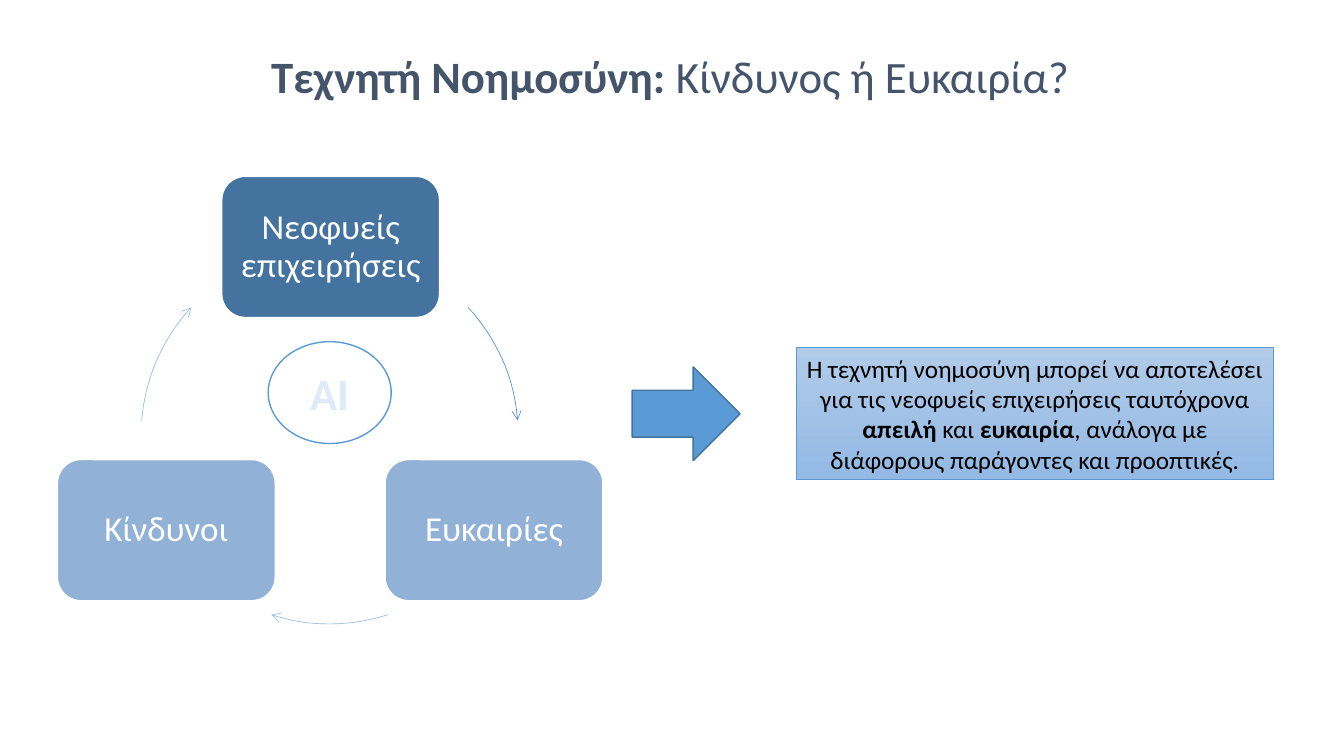
import dataclasses
import typing

import pptx
import pptx.dml.color
import pptx.enum.shapes
import pptx.enum.text
import pptx.oxml.ns
import pptx.util
from lxml import etree

Inches = pptx.util.Inches
ShapeKind = pptx.enum.shapes.MSO_SHAPE
Anchor = pptx.enum.text.MSO_ANCHOR


@dataclasses.dataclass(frozen=True)
class Theme:
    font: str = "Calibri"
    title_size: int = 32
    step_size: int = 25
    body_size: int = 18
    white: str = "FFFFFF"
    black: str = "000000"
    title: str = "44546A"
    accent: str = "5B9BD5"
    dark_blue: str = "43739E"
    soft_blue: str = "91B1D6"
    pale_blue: str = "DEEBF7"
    first_arc: str = "5794CB"
    soft_arc: str = "A0BEE0"
    gradient: tuple[str, str] = ("B1CBE9", "93B9E4")


class Area(typing.NamedTuple):
    left: float
    top: float
    width: float
    height: float


class Run(typing.NamedTuple):
    text: str
    bold: bool = False


class Step(typing.NamedTuple):
    text: str
    left: float
    top: float
    fill: str


class Arc(typing.NamedTuple):
    start: float
    end: float
    color: str


THEME = Theme()
STEP_WIDTH, STEP_HEIGHT = 2.16, 1.4
CYCLE = Area(1.4, 2.45, 3.74, 3.74)
STEPS = [
    Step("Νεοφυείς επιχειρήσεις", 2.2, 1.75, THEME.dark_blue),
    Step("Ευκαιρίες", 3.82, 4.56, THEME.soft_blue),
    Step("Κίνδυνοι", 0.57, 4.56, THEME.soft_blue),
]
ARCS = [
    Arc(317.2, 355.4, THEME.first_arc),
    Arc(72, 108, THEME.soft_arc),
    Arc(184.6, 222.8, THEME.soft_arc),
]
TITLE = [Run("Τεχνητή Νοημοσύνη: ", True), Run("Κίνδυνος ή Ευκαιρία? ")]
CONCLUSION = [
    Run("Η τεχνητή νοημοσύνη μπορεί να αποτελέσει για τις νεοφυείς επιχειρήσεις ταυτόχρονα "),
    Run("απειλή", True),
    Run(" και "),
    Run("ευκαιρία", True),
    Run(", ανάλογα με διάφορους παράγοντες και προοπτικές."),
]


def rgb(color: str) -> pptx.dml.color.RGBColor:
    return pptx.dml.color.RGBColor.from_string(color)


def add_shape(slide, kind, area: Area, fill: str | None, line: str, weight: float = 1):
    shape = slide.shapes.add_shape(kind, *map(Inches, area))
    shape.shadow.inherit = False
    if fill:
        shape.fill.solid()
        shape.fill.fore_color.rgb = rgb(fill)
    else:
        shape.fill.background()
    shape.line.color.rgb = rgb(line)
    shape.line.width = pptx.util.Pt(weight)
    return shape


def write(shape, runs: list[Run], size: int, color: str, spacing: float = 1.0,
          anchor=Anchor.MIDDLE) -> None:
    frame = shape.text_frame
    frame.word_wrap = True
    frame.vertical_anchor = anchor
    para = frame.paragraphs[0]
    para.alignment = pptx.enum.text.PP_ALIGN.CENTER
    para.line_spacing = spacing
    para.font.name = THEME.font
    para.font.size = pptx.util.Pt(size)
    para.font.color.rgb = rgb(color)
    for run in runs:
        span = para.add_run()
        span.text = run.text
        span.font.bold = run.bold


def add_step(slide, step: Step) -> None:
    area = Area(step.left, step.top, STEP_WIDTH, STEP_HEIGHT)
    box = add_shape(slide, ShapeKind.ROUNDED_RECTANGLE, area, step.fill, THEME.white)
    frame = box.text_frame
    frame.margin_left = frame.margin_right = Inches(0.1)
    write(box, [Run(step.text)], THEME.step_size, THEME.white, 0.9)


def add_arc(slide, arc: Arc) -> None:
    """Draw a clockwise arrow on the cycle; angles are degrees from three o'clock."""
    shape = add_shape(slide, ShapeKind.ARC, CYCLE, None, arc.color, 0.5)
    for index, angle in enumerate((arc.start, arc.end)):
        shape.adjustments[index] = angle * 60000 / 100000
    line = shape.line._get_or_add_ln()
    etree.SubElement(line, pptx.oxml.ns.qn("a:tailEnd"), type="arrow")


def add_conclusion(slide) -> None:
    box = add_shape(slide, ShapeKind.RECTANGLE, Area(7.9, 3.45, 4.73, 1.31),
                    None, THEME.accent, 0.5)
    box.fill.gradient()
    box.fill.gradient_angle = 270
    for stop, color in zip(box.fill.gradient_stops, THEME.gradient):
        stop.color.rgb = rgb(color)
    write(box, CONCLUSION, THEME.body_size, THEME.black)


def main() -> None:
    deck = pptx.Presentation()
    deck.slide_width, deck.slide_height = Inches(13.33), Inches(7.5)
    slide = deck.slides.add_slide(deck.slide_layouts[6])

    for step, arc in zip(STEPS, ARCS):
        add_step(slide, step)
        add_arc(slide, arc)

    title = slide.shapes.add_textbox(*map(Inches, Area(2.53, 0.49, 8.34, 0.73)))
    write(title, TITLE, THEME.title_size, THEME.title, 0.9, Anchor.TOP)

    hub = add_shape(slide, ShapeKind.OVAL, Area(2.66, 3.39, 1.22, 1.01),
                    THEME.white, THEME.accent)
    write(hub, [Run("AI", True)], THEME.title_size, THEME.pale_blue)

    add_conclusion(slide)
    add_shape(slide, ShapeKind.RIGHT_ARROW, Area(6.27, 3.64, 1.07, 0.93),
              THEME.accent, THEME.dark_blue)
    deck.save("out.pptx")


if __name__ == "__main__":
    main()
